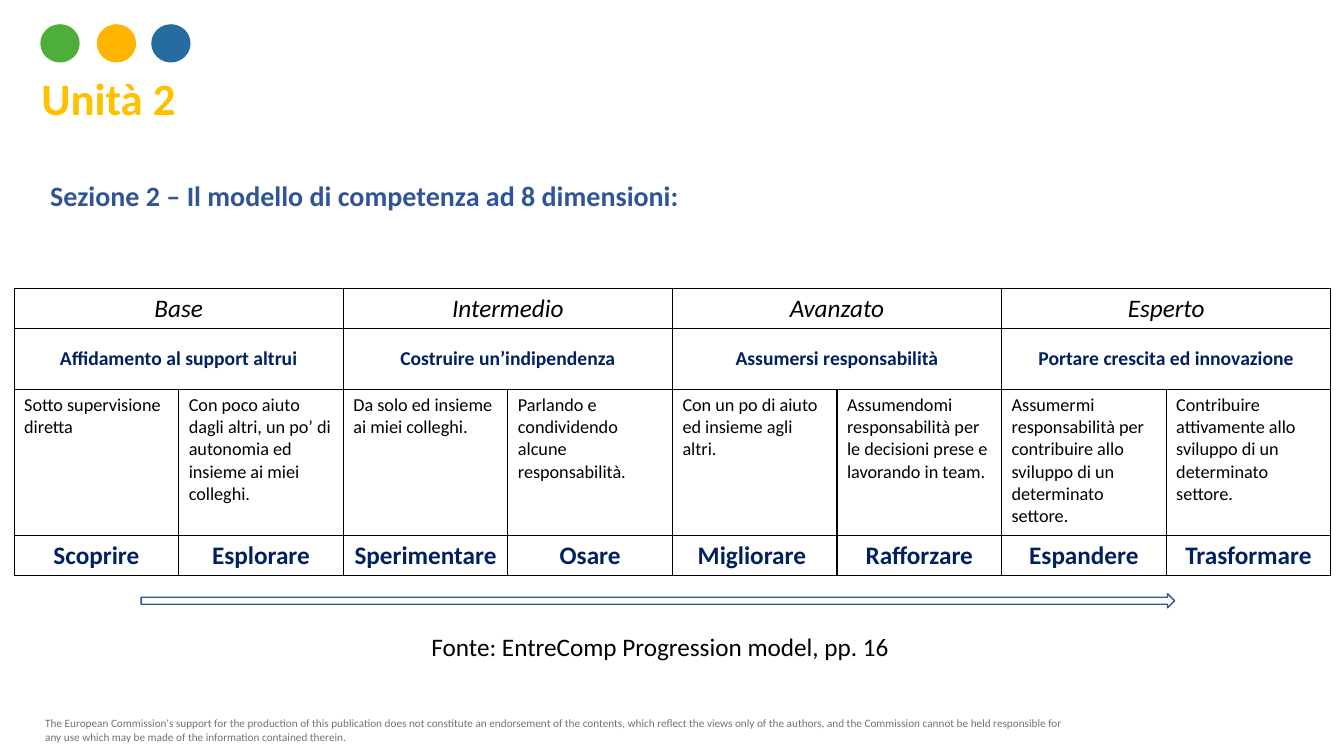
import pptx
import pptx.util
import pptx.dml.color
import pptx.enum.shapes
import pptx.enum.text
import pptx.oxml
import pptx.oxml.ns

Inches = pptx.util.Inches
RGBColor = pptx.dml.color.RGBColor
SHAPE = pptx.enum.shapes.MSO_SHAPE
ALIGN = pptx.enum.text.PP_ALIGN
ANCHOR = pptx.enum.text.MSO_ANCHOR

BLACK = RGBColor(0x00, 0x00, 0x00)
GRAY = RGBColor(0x76, 0x71, 0x71)
GOLD = RGBColor(0xFF, 0xC0, 0x00)
BLUE = RGBColor(0x2F, 0x55, 0x97)
NAVY = RGBColor(0x00, 0x20, 0x60)
ARROW_BLUE = RGBColor(0x32, 0x54, 0x91)
DOT_GREEN = RGBColor(0x4E, 0xAE, 0x3A)
DOT_AMBER = RGBColor(0xFF, 0xB5, 0x00)
DOT_BLUE = RGBColor(0x26, 0x6C, 0x9F)

LEVELS = [
    ("Base", "Affidamento al support altrui"),
    ("Intermedio", "Costruire un’indipendenza"),
    ("Avanzato", "Assumersi responsabilità"),
    ("Esperto", "Portare crescita ed innovazione"),
]
STEPS = [
    ("Sotto supervisione diretta", "Scoprire"),
    ("Con poco aiuto dagli altri, un po’ di autonomia ed insieme ai miei colleghi.", "Esplorare"),
    ("Da solo ed insieme ai miei colleghi.", "Sperimentare"),
    ("Parlando e condividendo alcune responsabilità.", "Osare"),
    ("Con un po di aiuto ed insieme agli altri.", "Migliorare "),
    ("Assumendomi responsabilità per le decisioni prese e lavorando in team.", "Rafforzare"),
    ("Assumermi responsabilità per contribuire allo sviluppo di un determinato settore.", "Espandere"),
    ("Contribuire attivamente allo sviluppo di un determinato settore.", "Trasformare"),
]
ROW_HEIGHTS = [0.4, 0.6, 1.45, 0.4]


def write(tf, text, size=18, color=BLACK, bold=False, italic=False, align=ALIGN.LEFT):
    tf.word_wrap = True
    p = tf.paragraphs[0]
    p.alignment = align
    r = p.add_run()
    r.text = text
    r.font.name = "Calibri"
    r.font.size = pptx.util.Pt(size)
    r.font.bold = bold
    r.font.italic = italic
    r.font.color.rgb = color


def add_text(s, x, y, w, h, text, **style):
    sp = s.shapes.add_textbox(Inches(x), Inches(y), Inches(w), Inches(h))
    write(sp.text_frame, text, **style)


def add_title(s, x, y, w, h):
    sp = s.shapes.title
    sp.left, sp.top, sp.width, sp.height = Inches(x), Inches(y), Inches(w), Inches(h)
    tf = sp.text_frame
    tf.auto_size = pptx.enum.text.MSO_AUTO_SIZE.NONE
    tf.vertical_anchor = ANCHOR.TOP
    write(tf, "Unità 2", size=32, color=GOLD, bold=True)


def add_dots(s, x, y, w, h):
    for dx, color in [(0, DOT_GREEN), (0.56, DOT_AMBER), (1.1, DOT_BLUE)]:
        sp = s.shapes.add_shape(SHAPE.OVAL, Inches(x + dx), Inches(y), Inches(w), Inches(h))
        sp.shadow.inherit = False
        sp.fill.solid()
        sp.fill.fore_color.rgb = color
        sp.line.fill.background()


def add_borders(cell):
    tcPr = cell._tc.get_or_add_tcPr()
    for side in ("lnL", "lnR", "lnT", "lnB"):
        tcPr.append(pptx.oxml.parse_xml(
            f'<a:{side} {pptx.oxml.ns.nsdecls("a")} w="12700"><a:solidFill>'
            f'<a:srgbClr val="{BLACK}"/></a:solidFill></a:{side}>'))


def add_levels_table(s, x, y, w, h):
    table = s.shapes.add_table(
        len(ROW_HEIGHTS), len(STEPS), Inches(x), Inches(y), Inches(w), Inches(h)).table
    table.first_row = False
    table.horz_banding = False
    for col in table.columns:
        col.width = Inches(w / len(STEPS))
    for row, height in zip(table.rows, ROW_HEIGHTS):
        row.height = Inches(height)
    for cell in table.iter_cells():
        add_borders(cell)
        cell.fill.background()
    for i, (level, focus) in enumerate(LEVELS):
        for row in range(2):
            table.cell(row, 2 * i).merge(table.cell(row, 2 * i + 1))
        write(table.cell(0, 2 * i).text_frame, level, italic=True, align=ALIGN.CENTER)
        cell = table.cell(1, 2 * i)
        cell.vertical_anchor = ANCHOR.MIDDLE
        write(cell.text_frame, focus, size=14, color=NAVY, bold=True, align=ALIGN.CENTER)
    for i, (description, step) in enumerate(STEPS):
        write(table.cell(2, i).text_frame, description, size=13)
        write(table.cell(3, i).text_frame, step, color=NAVY, bold=True, align=ALIGN.CENTER)


def add_progress_arrow(s, x, y, w, h):
    sp = s.shapes.add_shape(SHAPE.RIGHT_ARROW, Inches(x), Inches(y), Inches(w), Inches(h))
    sp.shadow.inherit = False
    sp.fill.background()
    sp.line.color.rgb = ARROW_BLUE
    sp.line.width = pptx.util.Pt(1)


def main():
    prs = pptx.Presentation()
    prs.slide_width, prs.slide_height = Inches(13.33), Inches(7.5)
    s = prs.slides.add_slide(prs.slide_layouts[5])
    add_title(s, 0.31, 0.65, 1.68, 0.64)
    add_text(s, 0.35, 7.06, 10.46, 0.37,
             "The European Commission's support for the production of this publication does not "
             "constitute an endorsement of the contents, which reflect the views only of the "
             "authors, and the Commission cannot be held responsible for any use which may be "
             "made of the information contained therein.", size=8, color=GRAY)
    add_text(s, 0.4, 1.72, 12.26, 0.44, "Sezione 2 – Il modello di competenza ad 8 dimensioni: ",
             size=20, color=BLUE, bold=True, align=ALIGN.JUSTIFY)
    add_dots(s, 0.4, 0.24, 0.39, 0.38)
    add_levels_table(s, 0.14, 2.86, 13.06, sum(ROW_HEIGHTS))
    add_text(s, 4.18, 6.21, 4.97, 0.4, "Fonte: EntreComp Progression model, pp. 16")
    add_progress_arrow(s, 1.4, 5.89, 10.25, 0.14)
    prs.save("out.pptx")


if __name__ == "__main__":
    main()
